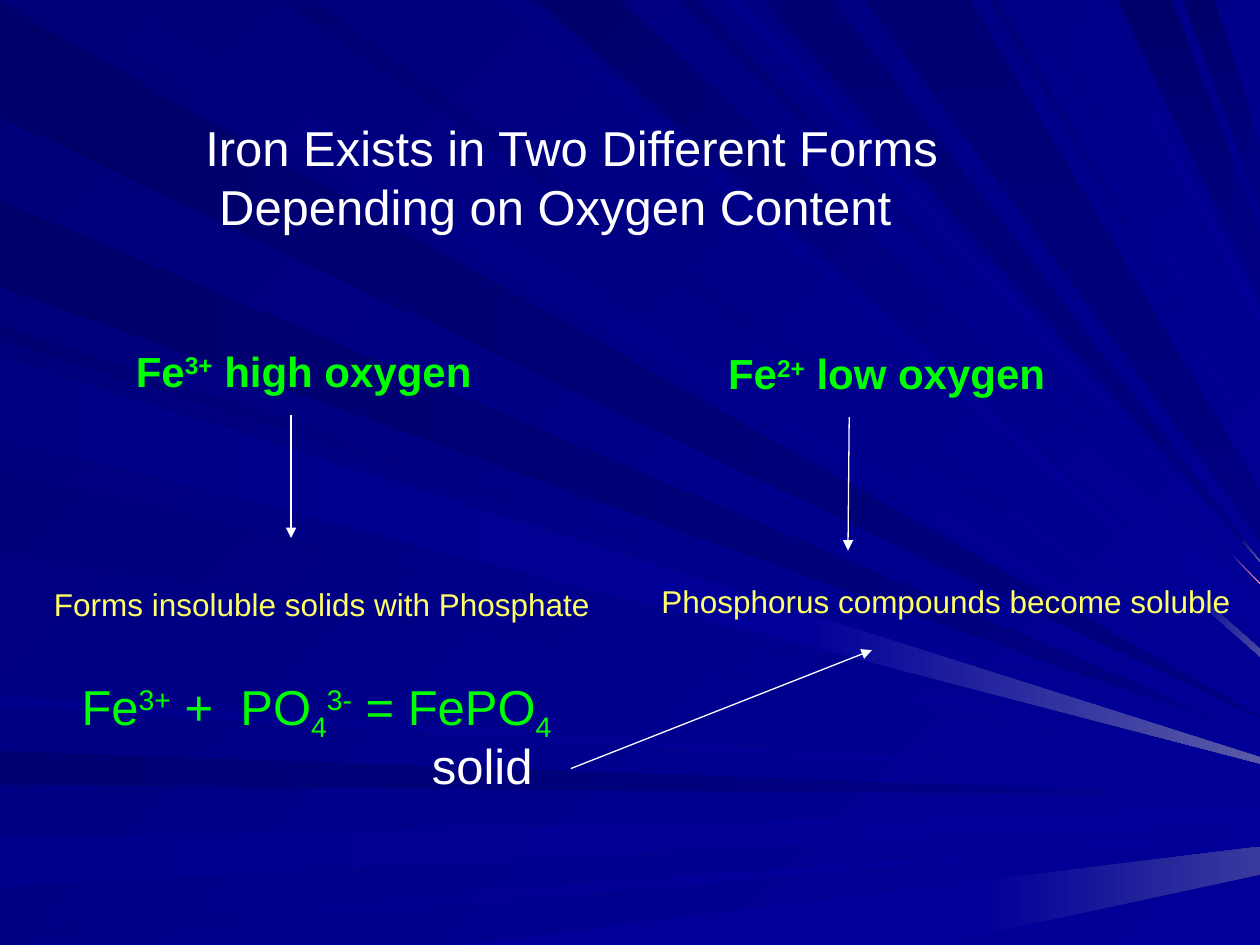
"""Builds a slide on the two forms of iron over a background of light rays."""
from pptx import Presentation
from pptx.dml.color import RGBColor
from pptx.enum.shapes import MSO_CONNECTOR
from pptx.enum.text import MSO_ANCHOR, MSO_AUTO_SIZE, PP_ALIGN
from pptx.oxml.ns import qn
from pptx.util import Pt
from lxml.etree import SubElement

PX = 9144
WIDTH, HEIGHT = 1000, 750
TITLE_ONLY = 5

COLORS = {
    "white": "FFFFFF", "green": "00FF00", "yellow": "FFFF66", "pink": "FF9999",
    "deep": "00006B", "dark": "000073", "base": "000078", "dim": "00007B",
    "navy": "000080", "soft": "000085", "clear": "00008C", "royal": "000099",
    "haze": "39399E", "mist": "4A4AA1", "pale": "5A5AA6",
}
ANGLES = {"flat": 0, "slant": 45, "steep": 90}
SIDES = {
    "left": lambda place: (0, place),
    "top": lambda place: (place, 0),
    "bottom": lambda place: (place, HEIGHT),
}

RAYS = [
    ("left", (2, 93), (569, 570), "flat", "deep navy"),
    ("top", (101, 26), (562, 563), "slant", "dim royal"),
    ("left", (596, 623), (631, 632), "flat", "dark navy royal", 701),
    ("left", (665, 704), (643, 651), "flat", "clear royal royal", 831),
    ("left", (735, 750), (662, 662), "flat", "soft royal royal", 628),
    ("bottom", (364, 742), (672, 694), "flat", "royal royal haze", 778),
    ("left", (258, 270), (589, 589), "slant", "dark royal royal", 873),
    ("left", (159, 228), (584, 585), "flat", "deep navy royal", 873),
    ("top", (416, 398), (515, 521), "slant", "soft royal mist", 945),
    ("top", (492, 426), (479, 507), "slant", "deep royal royal", 960),
    ("top", (552, 540), (463, 463), "slant", "dark royal pink", 977),
    ("top", (661, 606), (445, 446), "steep", "dark navy pale", 986),
    ("top", (930, 887), (183, 237), "steep", "deep navy navy", 980),
    ("top", (964, 939), (114, 167), "steep", "deep navy navy", 994),
    ("left", (278, 342), (596, 602), "slant", "dim royal"),
    ("left", (374, 437), (605, 606), "slant", "dim royal"),
    ("left", (552, 560), (621, 623), "flat", "clear royal"),
    ("top", (247, 225), (547, 552), "slant", "dark royal"),
    ("top", (588, 577), (453, 454), "slant", "clear royal"),
    ("top", (770, 686), (390, 428), "steep", "dark navy"),
    ("top", (792, 785), (354, 360), "slant", "base royal"),
    ("top", (824, 815), (335, 336), "slant", "soft royal"),
    ("top", (872, 865), (249, 258), "slant", "clear royal"),
    ("left", (283, 347), (601, 606), "flat", "soft royal pale", 635),
]

HEADING = {"size": Pt(24), "bold": True, "color": "green"}
RESULT = {"size": Pt(18), "bold": False, "color": "yellow"}
FORMULA = {"size": Pt(28), "bold": False, "color": "green"}
PLAIN = {"size": Pt(28), "bold": False, "color": "white"}
UP, DOWN = 30, -25

TITLE_PLACE = (153, 88, 606, 103)
TITLE_LINES = [
    ("Iron Exists in Two Different Forms", 0),
    ("Depending on Oxygen Content", 11),
]
LABELS = [
    ((98, 269, 290, 50), HEADING, [("Fe", 0), ("3+", UP), (" high oxygen", 0)]),
    ((568, 271, 275, 50), HEADING, [("Fe", 0), ("2+", UP), (" low oxygen", 0)]),
    ((33, 459, 445, 40), RESULT, [("Forms insoluble solids with Phosphate", 0)]),
    ((515, 457, 472, 40), RESULT, [("Phosphorus compounds become soluble", 0)]),
    ((55, 532, 406, 57), FORMULA, [("Fe", 0), ("3+", UP), (" +  PO", 0), ("4", DOWN),
                                   ("3-", UP), (" = FePO", 0), ("4", DOWN)]),
    ((333, 579, 100, 57), PLAIN, [("solid", 0)]),
]
ARROWS = [(231, 329, 231, 427), (674, 331, 673, 437), (453, 610, 692, 516)]


def rgb(name):
    return RGBColor.from_string(COLORS[name])


def emu(lengths):
    return [length * PX for length in lengths]


def paint(fill, first, last, angle):
    if first == last:
        fill.solid()
        fill.fore_color.rgb = rgb(first)
        return
    fill.gradient()
    fill.gradient_angle = -angle % 360
    for stop, name in zip(fill.gradient_stops, (first, last)):
        stop.color.rgb = rgb(name)


def add_beam(page, points, first, last, angle):
    builder = page.shapes.build_freeform(*points[0], scale=PX)
    builder.add_line_segments(points[1:], close=True)
    beam = builder.convert_to_shape()
    beam.shadow.inherit = False
    beam.line.fill.background()
    paint(beam.fill, first, last, angle)


def point_at(x, start, end):
    share = (x - start[0]) / (end[0] - start[0])
    return x, round(start[1] + share * (end[1] - start[1]))


def add_ray(page, side, places, heights, slope, shades, split=WIDTH):
    starts = [SIDES[side](place) for place in places]
    ends = [(WIDTH, height) for height in heights]
    middles = [point_at(split, *edge) for edge in zip(starts, ends)]
    cuts = [starts, middles, ends]
    names = shades.split()
    for number in range(len(names) - 1):
        near, far = cuts[number:number + 2]
        add_beam(page, near + far[::-1], *names[number:number + 2], ANGLES[slope])


def style_frame(frame):
    settings = {"word_wrap": False, "auto_size": MSO_AUTO_SIZE.SHAPE_TO_FIT_TEXT,
                "vertical_anchor": MSO_ANCHOR.TOP}
    for name, value in settings.items():
        setattr(frame, name, value)


def add_span(para, text, style, baseline=0):
    span = para.add_run()
    span.text = text
    span.font.name = "Arial"
    for name in ("size", "bold"):
        setattr(span.font, name, style[name])
    span.font.color.rgb = rgb(style["color"])
    if baseline:
        span._r.get_or_add_rPr().set("baseline", str(baseline * 1000))


def fill_title(page):
    title = page.shapes.title
    title.element.getparent().append(title.element)
    title.left, title.top, title.width, title.height = emu(TITLE_PLACE)
    frame = title.text_frame
    style_frame(frame)
    for number, (text, indent) in enumerate(TITLE_LINES):
        para = frame.add_paragraph() if number else frame.paragraphs[0]
        para.alignment = PP_ALIGN.LEFT
        para._p.get_or_add_pPr().set("marL", str(indent * PX))
        add_span(para, text, PLAIN)


def add_label(page, place, style, spans):
    frame = page.shapes.add_textbox(*emu(place)).text_frame
    style_frame(frame)
    for text, baseline in spans:
        add_span(frame.paragraphs[0], text, style, baseline)


def add_arrow(page, ends):
    arrow = page.shapes.add_connector(MSO_CONNECTOR.STRAIGHT, *emu(ends))
    arrow.line.width = Pt(0.75)
    arrow.line.color.rgb = rgb("white")
    SubElement(arrow.line._get_or_add_ln(), qn("a:tailEnd"), type="triangle")
    SubElement(arrow.element.spPr, qn("a:effectLst"))


def main():
    deck = Presentation()
    deck.slide_width, deck.slide_height = emu((WIDTH, HEIGHT))
    page = deck.slides.add_slide(deck.slide_layouts[TITLE_ONLY])
    paint(page.background.fill, "base", "royal", ANGLES["slant"])
    for ray in RAYS:
        add_ray(page, *ray)
    fill_title(page)
    for label in LABELS:
        add_label(page, *label)
    for ends in ARROWS:
        add_arrow(page, ends)
    deck.save("out.pptx")


if __name__ == "__main__":
    main()
